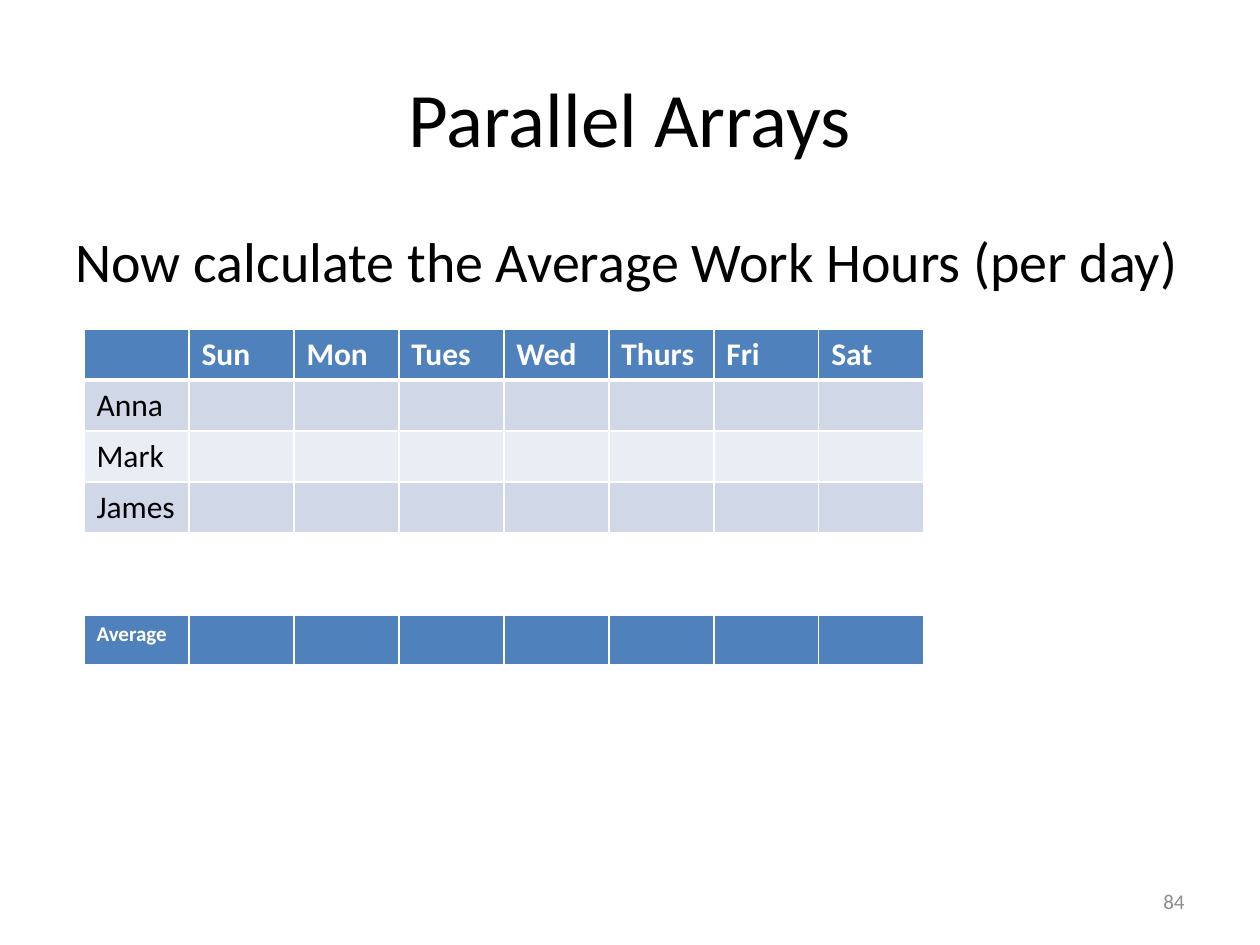
import dataclasses

import pptx
import pptx.dml.color
import pptx.enum.text
import pptx.oxml
import pptx.oxml.ns
import pptx.util

ALIGN = pptx.enum.text.PP_ALIGN
ANCHOR = pptx.enum.text.MSO_ANCHOR


@dataclasses.dataclass(frozen=True)
class Theme:
    font: str = "Calibri"
    ink: str = "000000"
    muted: str = "8C8C8C"
    paper: str = "FFFFFF"
    accent: str = "4F81BD"
    bands: tuple = ("D0D8E8", "E9EDF4")
    title_size: int = 44
    body_size: int = 32
    cell_size: int = 18
    small_size: int = 12
    thin: int = 1
    thick: int = 3


THEME = Theme()

# Page and table grid, in inches
PAGE_WIDTH, PAGE_HEIGHT = 10, 7.5
MARGIN = PAGE_WIDTH / 20
CONTENT_WIDTH = PAGE_WIDTH - 2 * MARGIN
TABLE_LEFT = PAGE_WIDTH / 15
COLUMN_WIDTH = PAGE_WIDTH / 12
ROW_HEIGHT = 0.405

DAYS = ["Sun", "Mon", "Tues", "Wed", "Thurs", "Fri", "Sat"]
WORKERS = ["Anna", "Mark", "James"]


def format_text(frame, size, color, bold=False, align=ALIGN.LEFT):
    for para in frame.paragraphs:
        para.alignment = align
        # The paragraph font also sizes empty cells
        fonts = [span.font for span in para.runs] or [para.font]
        for font in fonts:
            font.name = THEME.font
            font.size = pptx.util.Pt(size)
            font.bold = bold
            font.color.rgb = pptx.dml.color.RGBColor.from_string(color)


def add_text(page, text, area, size, color, align=ALIGN.LEFT, anchor=ANCHOR.TOP):
    box = page.shapes.add_textbox(*map(pptx.util.Inches, area))
    frame = box.text_frame
    frame.word_wrap = True
    frame.vertical_anchor = anchor
    frame.text = text
    format_text(frame, size, color, align=align)


def set_borders(cell, bottom):
    properties = cell._tc.get_or_add_tcPr()
    widths = {"lnL": THEME.thin, "lnR": THEME.thin, "lnT": THEME.thin, "lnB": bottom}
    for position, (tag, width) in enumerate(widths.items()):
        line = pptx.oxml.parse_xml(
            f'<a:{tag} {pptx.oxml.ns.nsdecls("a")} w="{pptx.util.Pt(width)}">'
            f'<a:solidFill><a:srgbClr val="{THEME.paper}"/></a:solidFill></a:{tag}>'
        )
        properties.insert(position, line)


def style_cell(cell, fill, size, color, bold, bottom):
    cell.fill.solid()
    cell.fill.fore_color.rgb = pptx.dml.color.RGBColor.from_string(fill)
    format_text(cell.text_frame, size, color, bold)
    set_borders(cell, bottom)


def add_grid(page, top, rows, header_size):
    """Add a table whose first row is a header and whose other rows are banded."""
    columns = len(rows[0])
    area = (TABLE_LEFT, top, columns * COLUMN_WIDTH, len(rows) * ROW_HEIGHT)
    table = page.shapes.add_table(
        len(rows), columns, *map(pptx.util.Inches, area)
    ).table
    table.horz_banding = False
    table.first_row = False
    for index, row in enumerate(rows):
        if index == 0:
            look = (THEME.accent, header_size, THEME.paper, True, THEME.thick)
        else:
            band = THEME.bands[(index - 1) % len(THEME.bands)]
            look = (band, THEME.cell_size, THEME.ink, False, THEME.thin)
        for column, text in enumerate(row):
            cell = table.cell(index, column)
            cell.text_frame.text = text
            style_cell(cell, *look)


def main():
    deck = pptx.Presentation()
    deck.slide_width = pptx.util.Inches(PAGE_WIDTH)
    deck.slide_height = pptx.util.Inches(PAGE_HEIGHT)
    page = deck.slides.add_slide(deck.slide_layouts[6])

    # Title, task and page number
    add_text(page, "Parallel Arrays", (MARGIN, 0.3, CONTENT_WIDTH, 1.25),
             THEME.title_size, THEME.ink, ALIGN.CENTER, ANCHOR.MIDDLE)
    add_text(page, "Now calculate the Average Work Hours (per day)",
             (MARGIN, 1.75, CONTENT_WIDTH, 4.95), THEME.body_size, THEME.ink)
    add_text(page, "84", (7.17, 6.95, 2.33, 0.4),
             THEME.small_size, THEME.muted, ALIGN.RIGHT, ANCHOR.MIDDLE)

    # Work hours by person and day, then the daily averages
    blanks = [""] * len(DAYS)
    hours = [["", *DAYS]] + [[worker, *blanks] for worker in WORKERS]
    add_grid(page, 2.61, hours, THEME.cell_size)
    add_grid(page, 4.88, [["Average", *blanks]], THEME.small_size)

    deck.save("out.pptx")


if __name__ == "__main__":
    main()
